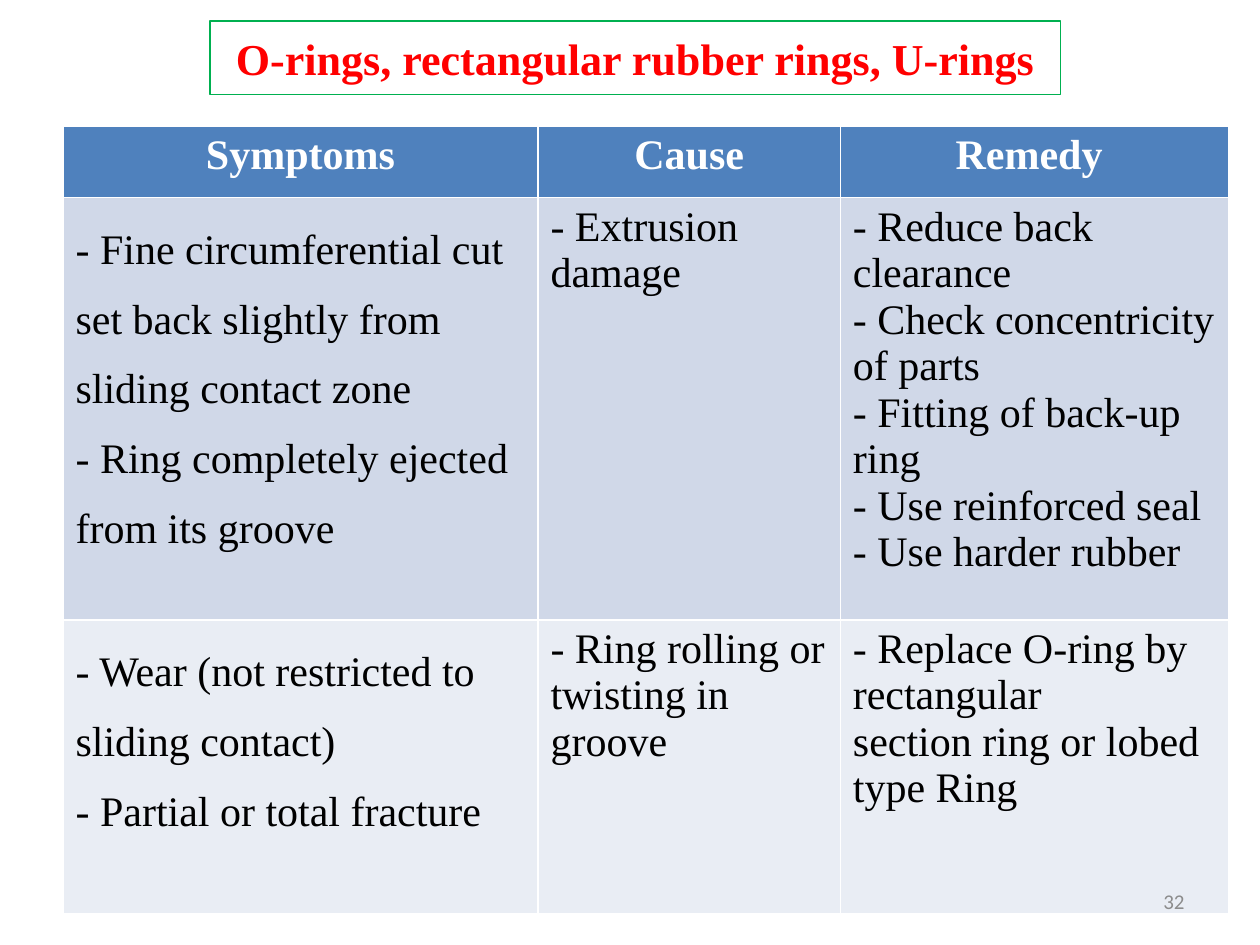
from dataclasses import dataclass

from pptx import Presentation
from pptx import util as u
from pptx.dml.color import RGBColor
from pptx.enum import shapes, text


@dataclass(frozen=True)
class Theme:
    serif: str = "Times New Roman"
    sans: str = "Calibri"
    title_size: float = 25.2
    table_size: float = 24
    number_size: float = 12
    title: str = "FF0000"
    frame: str = "00B050"
    header: str = "4F81BD"
    header_text: str = "FFFFFF"
    body_text: str = "000000"
    bands: tuple = ("D0D8E8", "E9EDF4")
    number: str = "8C8C8C"


THEME = Theme()

COLUMN_WIDTHS = (271.4, 172.8, 221.8)
ROW_HEIGHTS = (41, 241.2, 167.8)
SYMPTOMS_SPACING = 1.5

HEADINGS = ("Symptoms", "Cause", "Remedy ")
# Each fault: symptoms, cause, remedy; one line per paragraph
FAULTS = (
    (
        "- Fine circumferential cut set back slightly from sliding contact zone\n"
        "- Ring completely ejected from its groove",
        "- Extrusion damage",
        "- Reduce back clearance\n"
        "- Check concentricity of parts\n"
        "- Fitting of back-up ring\n"
        "- Use reinforced seal\n"
        "- Use harder rubber",
    ),
    (
        "- Wear (not restricted to\nsliding contact)\n- Partial or total fracture",
        "- Ring rolling or\ntwisting in groove",
        "- Replace O-ring by rectangular\nsection ring or lobed type Ring",
    ),
)


def box(left, top, width, height):
    return [u.Pt(length) for length in (left, top, width, height)]


def write(frame, wording, font, size, color, bold=False,
          align=text.PP_ALIGN.LEFT, spacing=None):
    frame.text = wording
    frame.word_wrap = True
    for paragraph in frame.paragraphs:
        paragraph.alignment = align
        if spacing:
            paragraph.line_spacing = spacing
        for run in paragraph.runs:
            run.font.name = font
            run.font.size = u.Pt(size)
            run.font.bold = bold
            run.font.color.rgb = RGBColor.from_string(color)


def add_title(slide, wording):
    title = slide.shapes.add_shape(
        shapes.MSO_SHAPE.RECTANGLE, *box(120, 12, 486, 42))
    title.shadow.inherit = False
    title.fill.background()
    title.line.color.rgb = RGBColor.from_string(THEME.frame)
    title.line.width = u.Pt(0.75)
    title.text_frame.vertical_anchor = text.MSO_ANCHOR.MIDDLE
    write(title.text_frame, wording, THEME.serif, THEME.title_size,
          THEME.title, bold=True, align=text.PP_ALIGN.CENTER)


def fill_cell(cell, wording, fill, color, **style):
    cell.fill.solid()
    cell.fill.fore_color.rgb = RGBColor.from_string(fill)
    write(cell.text_frame, wording, THEME.serif, THEME.table_size, color, **style)


def add_fault_table(slide):
    faults = slide.shapes.add_table(
        len(ROW_HEIGHTS), len(COLUMN_WIDTHS),
        *box(36, 72, sum(COLUMN_WIDTHS), sum(ROW_HEIGHTS))).table
    for column, width in zip(faults.columns, COLUMN_WIDTHS):
        column.width = u.Pt(width)
    for row, height in zip(faults.rows, ROW_HEIGHTS):
        row.height = u.Pt(height)

    # Header row
    for col, heading in enumerate(HEADINGS):
        fill_cell(faults.cell(0, col), heading, THEME.header, THEME.header_text,
                  bold=True, align=text.PP_ALIGN.CENTER)

    # Fault rows, with the symptoms set wider
    for row, (fault, band) in enumerate(zip(FAULTS, THEME.bands), start=1):
        for col, wording in enumerate(fault):
            fill_cell(faults.cell(row, col), wording, band, THEME.body_text,
                      spacing=SYMPTOMS_SPACING if col == 0 else None)


def add_slide_number(slide, number):
    corner = slide.shapes.add_textbox(*box(516, 500.5, 168, 28.75))
    corner.text_frame.vertical_anchor = text.MSO_ANCHOR.MIDDLE
    write(corner.text_frame, number, THEME.sans, THEME.number_size,
          THEME.number, align=text.PP_ALIGN.RIGHT)


def main():
    deck = Presentation()
    deck.slide_width, deck.slide_height = u.Pt(720), u.Pt(540)
    slide = deck.slides.add_slide(deck.slide_layouts[6])
    add_title(slide, "O-rings, rectangular rubber rings, U-rings")
    add_fault_table(slide)
    add_slide_number(slide, "32")
    deck.save("out.pptx")


if __name__ == "__main__":
    main()
